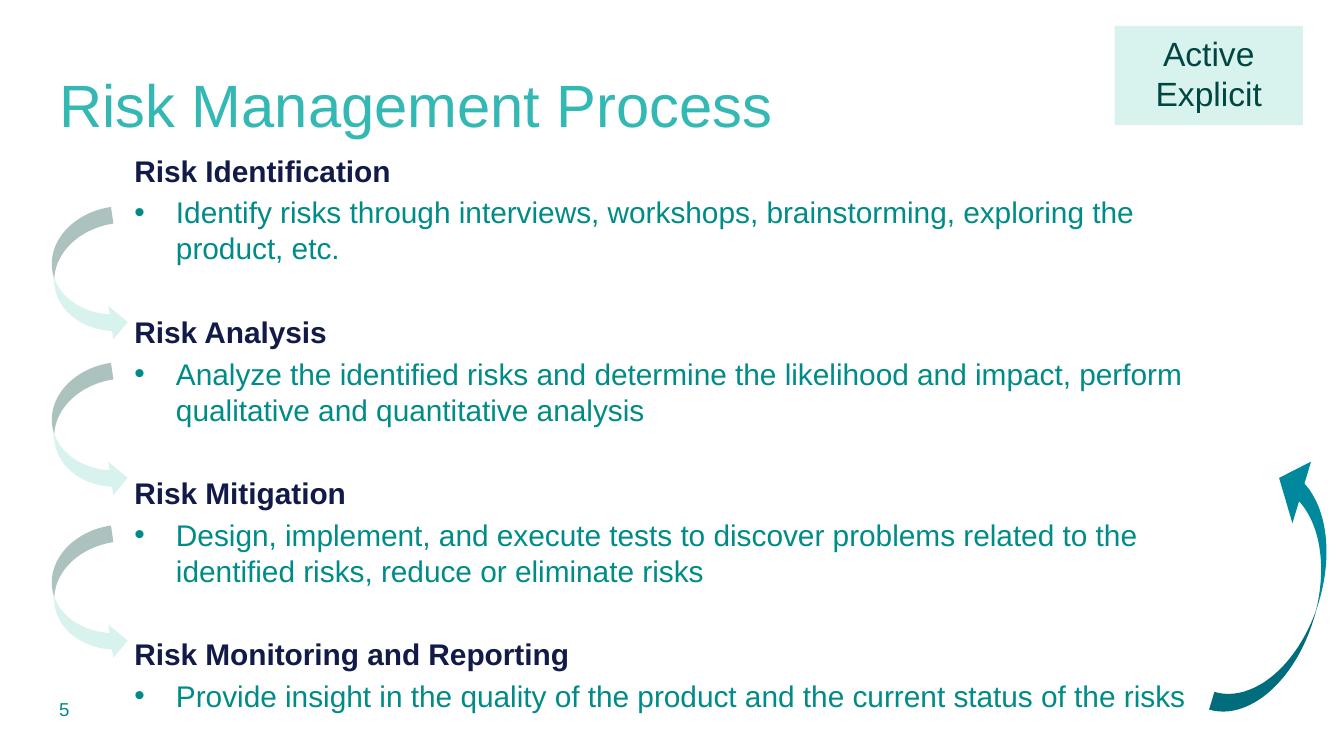
import pptx
import pptx.util
import pptx.dml.color
import pptx.enum.shapes
import pptx.enum.text
import pptx.oxml.ns
import lxml.etree

# Content
TITLE = "Risk Management Process"
STEPS = [
    ("Risk Identification",
     "Identify risks through interviews, workshops, brainstorming, exploring the product, etc."),
    ("Risk Analysis",
     "Analyze the identified risks and determine the likelihood and impact, "
     "perform qualitative and quantitative analysis"),
    ("Risk Mitigation",
     "Design, implement, and execute tests to discover problems related to the "
     "identified risks, reduce or eliminate risks"),
    ("Risk Monitoring and Reporting",
     "Provide insight in the quality of the product and the current status of the risks"),
]
TAG_LINES = ["Active", "Explicit"]
PAGE_NUMBER = "5"

# Places, as percent of the slide: left, top, width, height
TITLE_AREA = (4.4, 9.98, 87.1, 8.54)
STEPS_AREA = (10, 20.15, 82, 76.62)
NUMBER_AREA = (4.4, 92.3, 3, 2.67)
TAG_AREA = (82.94, 3.42, 14, 13.16)
STEP_ARROW_TOPS = (27.93, 48.55, 70.07)
LOOP_ARROW_AREA = (92.8, 59.78, 5.5, 36.27)

TURQUOISE, NAVY, TEAL = "34B8B3", "121A48", "008C86"
MINT, PETROL, FOREST = "D8F3EE", "00899D", "004643"

ARROW = pptx.enum.shapes.MSO_SHAPE.CURVED_RIGHT_ARROW
RECTANGLE = pptx.enum.shapes.MSO_SHAPE.RECTANGLE
ANCHOR = pptx.enum.text.MSO_ANCHOR
BULLET_INDENT = pptx.util.Inches(0.31)
BULLET_GAP, STEP_GAP = 3.2, 25.6

# Widescreen slide, 16 to 9
deck = pptx.Presentation()
deck.slide_width = pptx.util.Inches(10)
deck.slide_height = deck.slide_width * 9 // 16
slide = deck.slides.add_slide(deck.slide_layouts[6])


def color(hex_code):
    return pptx.dml.color.RGBColor.from_string(hex_code)


def place(area):
    sides = (deck.slide_width, deck.slide_height) * 2
    return [round(side * share / 100) for side, share in zip(sides, area)]


def add_frame(area, wrap=True):
    frame = slide.shapes.add_textbox(*place(area)).text_frame
    frame.margin_left = frame.margin_right = frame.margin_top = frame.margin_bottom = 0
    frame.word_wrap = wrap
    return frame


def add_figure(kind, area, fill, rotation=0):
    figure = slide.shapes.add_shape(kind, *place(area))
    figure.shadow.inherit = False
    figure.fill.solid()
    figure.fill.fore_color.rgb = color(fill)
    figure.line.fill.background()
    figure.rotation = rotation
    return figure


def write(paragraph, text, size, hex_code, bold=False):
    run = paragraph.add_run()
    run.text = text
    run.font.name = "Arial"
    run.font.size = pptx.util.Pt(size)
    run.font.bold = bold
    run.font.color.rgb = color(hex_code)


def next_paragraph(frame, index):
    return frame.add_paragraph() if index else frame.paragraphs[0]


def add_bullet(paragraph):
    properties = paragraph._p.get_or_add_pPr()
    properties.set("marL", str(BULLET_INDENT))
    properties.set("indent", str(-BULLET_INDENT))
    for tag, key, value in (("a:buFont", "typeface", "Arial"), ("a:buChar", "char", "•")):
        lxml.etree.SubElement(properties, pptx.oxml.ns.qn(tag)).set(key, value)


# Title
title_frame = add_frame(TITLE_AREA)
title_frame.vertical_anchor = ANCHOR.MIDDLE
title_frame.paragraphs[0].line_spacing = 0.9
write(title_frame.paragraphs[0], TITLE, 32, TURQUOISE)

# Steps
steps_frame = add_frame(STEPS_AREA)
for index, (step, description) in enumerate(STEPS):
    heading = next_paragraph(steps_frame, index)
    heading.space_before = pptx.util.Pt(STEP_GAP if index else 0)
    write(heading, step, 16, NAVY, bold=True)
    detail = steps_frame.add_paragraph()
    add_bullet(detail)
    detail.space_before = pptx.util.Pt(BULLET_GAP)
    write(detail, description, 16, TEAL)

# Page number
write(add_frame(NUMBER_AREA, wrap=False).paragraphs[0], PAGE_NUMBER, 10, TEAL)

# Arrows from step to step, and the loop back
for top in STEP_ARROW_TOPS:
    add_figure(ARROW, (4, top, 5, 17.6), MINT, 351.7)
loop_arrow = add_figure(ARROW, LOOP_ARROW_AREA, PETROL, 196.8)
for index, share in enumerate((0.25, 0.87, 0.35)):
    loop_arrow.adjustments[index] = share

# Tag
tag_frame = add_figure(RECTANGLE, TAG_AREA, MINT).text_frame
tag_frame.vertical_anchor = ANCHOR.TOP
for index, line in enumerate(TAG_LINES):
    tag_paragraph = next_paragraph(tag_frame, index)
    tag_paragraph.alignment = pptx.enum.text.PP_ALIGN.CENTER
    write(tag_paragraph, line, 18, FOREST)

deck.save("out.pptx")
